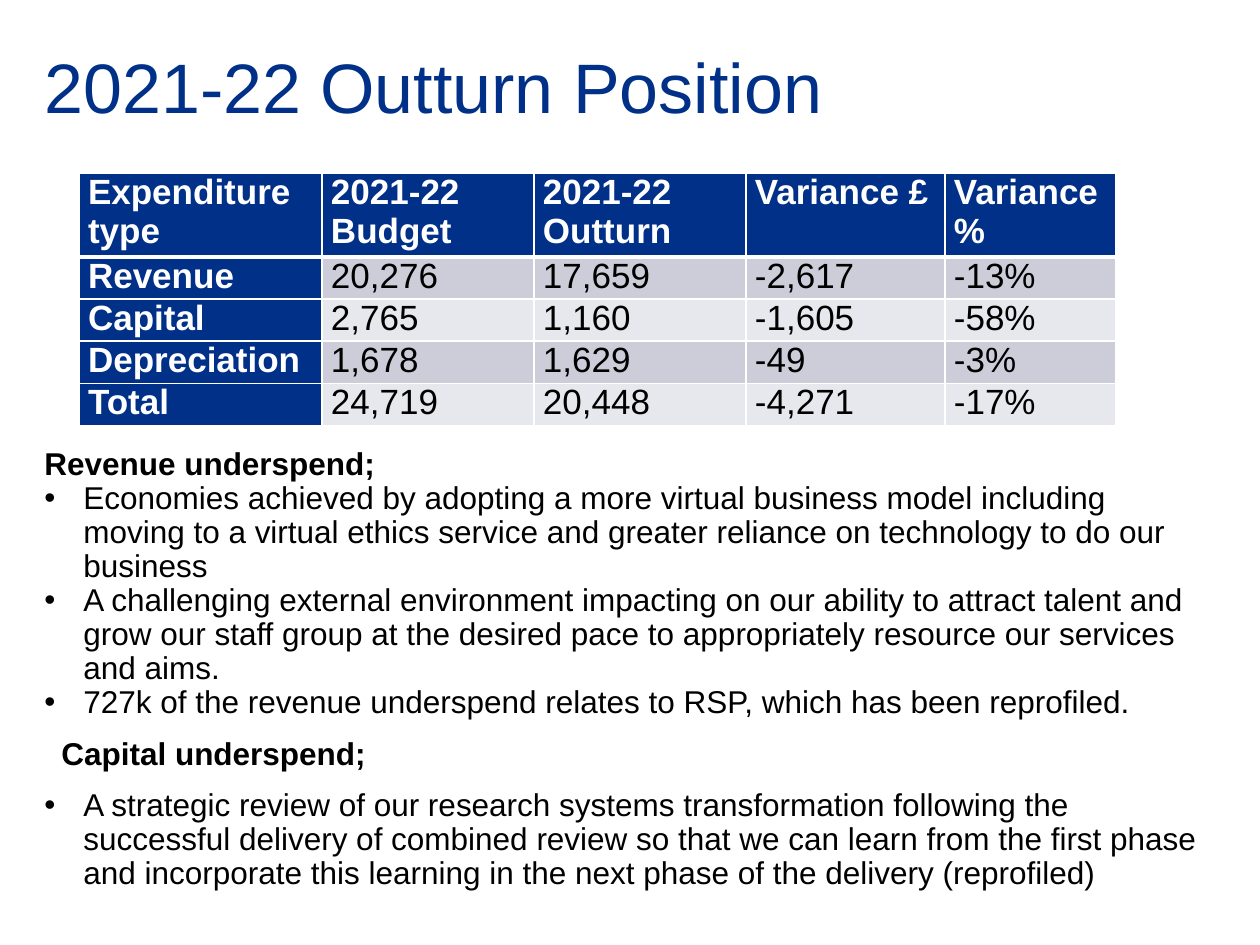
from lxml import etree
from pptx import Presentation
from pptx import util as u
from pptx.dml.color import RGBColor
from pptx.enum import text
from pptx.oxml.ns import qn

SCALE = 914400 / 126
COLORS = {"navy": "003087", "black": "000000", "white": "FFFFFF",
          "odd": "CCCDD9", "even": "E7E8ED"}
INDENT = 39


def px(length):
    return u.Emu(round(length * SCALE))


def style(paragraph, size, color, bold=False):
    paragraph.font.name = "Arial"
    paragraph.font.size = u.Pt(size)
    paragraph.font.bold = bold
    paragraph.font.color.rgb = RGBColor.from_string(COLORS[color])


deck = Presentation()
deck.slide_width, deck.slide_height = px(1260), px(945)
page = deck.slides.add_slide(deck.slide_layouts[6])

# Title
title = page.shapes.add_textbox(px(32), px(47), px(1217), px(126)).text_frame
title.word_wrap = True
para = title.paragraphs[0]
para.text = "2021-22 Outturn Position"
para.line_spacing = 0.9
style(para, 40, "navy")

# Outturn table
rows = [
    ["Expenditure type", "2021-22 Budget", "2021-22 Outturn", "Variance £", "Variance %"],
    ["Revenue", "20,276", "17,659", "-2,617", "-13%"],
    ["Capital", "2,765", "1,160", "-1,605", "-58%"],
    ["Depreciation", "1,678", "1,629", "-49", "-3%"],
    ["Total", "24,719", "20,448", "-4,271", "-17%"],
]
widths = [243, 212, 212, 199, 171]
heights = [73] + [37] * 4
table = page.shapes.add_table(len(rows), len(widths), px(79), px(173),
                              px(sum(widths)), px(sum(heights))).table
table.first_col = True
for column, width in zip(table.columns, widths):
    column.width = px(width)
for row, height in zip(table.rows, heights):
    row.height = px(height)

for r, values in enumerate(rows):
    for c, value in enumerate(values):
        cell = table.cell(r, c)
        heading = r == 0 or c == 0
        cell.margin_left = cell.margin_right = px(9)
        cell.margin_top = cell.margin_bottom = 0
        para = cell.text_frame.paragraphs[0]
        para.text = value
        style(para, 20, "white" if heading else "black", heading)

        # White borders, thicker between the header and the figures
        properties = cell._tc.get_or_add_tcPr()
        for side in ("lnL", "lnR", "lnT", "lnB"):
            thick = (r, side) in ((0, "lnB"), (1, "lnT"))
            border = etree.SubElement(properties, qn(f"a:{side}"),
                                      w=str(u.Pt(3 if thick else 1)))
            fill = etree.SubElement(border, qn("a:solidFill"))
            etree.SubElement(fill, qn("a:srgbClr"), val=COLORS["white"])

        band = "navy" if heading else "odd" if r % 2 else "even"
        cell.fill.solid()
        cell.fill.fore_color.rgb = RGBColor.from_string(COLORS[band])

# Commentary: wording, kind, left indent in px, space before in points
notes = [
    ("Revenue underspend;", "heading", 0, 0),
    ("Economies achieved by adopting a more virtual business model including moving "
     "to a virtual ethics service and greater reliance on technology to do our business",
     "bullet", INDENT, 0),
    ("A challenging external environment impacting on our ability to attract talent "
     "and grow our staff group at the desired pace to appropriately resource our "
     "services and aims.", "bullet", INDENT, 0),
    ("727k of the revenue underspend relates to RSP, which has been reprofiled.",
     "bullet", INDENT, 0),
    ("Capital underspend;", "heading", 17, 10),
    ("A strategic review of our research systems transformation following the "
     "successful delivery of combined review so that we can learn from the first phase "
     "and incorporate this learning in the next phase of the delivery (reprofiled)",
     "bullet", INDENT, 10),
]
body = page.shapes.add_textbox(px(32), px(442), px(1188), px(426)).text_frame
body.word_wrap = True
body.auto_size = text.MSO_AUTO_SIZE.NONE
for i, (wording, kind, left, before) in enumerate(notes):
    para = body.add_paragraph() if i else body.paragraphs[0]
    para.text = wording
    para.line_spacing = 0.9
    para.space_before = u.Pt(before)
    properties = para._p.get_or_add_pPr()
    properties.set("marL", str(px(left)))
    if kind == "bullet":
        properties.set("indent", str(-px(left)))
        etree.SubElement(properties, qn("a:buFont"), typeface="Arial")
        etree.SubElement(properties, qn("a:buChar"), char="•")
    style(para, 18, "black", kind == "heading")

deck.save("out.pptx")
